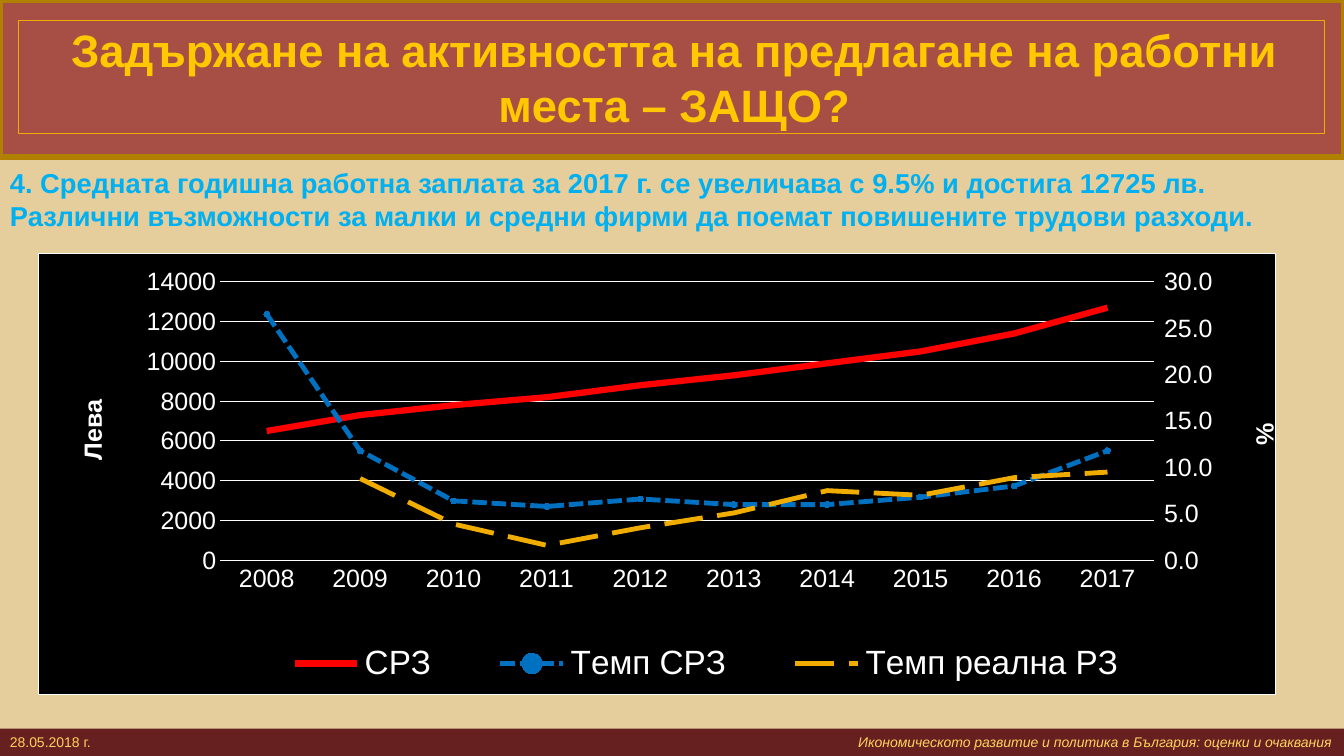
from copy import deepcopy

from pptx import Presentation
from pptx.chart.data import CategoryChartData
from pptx.dml.color import RGBColor
from pptx.enum.chart import XL_CHART_TYPE as Chart, XL_LEGEND_POSITION as Legend
from pptx.enum.chart import XL_MARKER_STYLE as Marker, XL_TICK_MARK as Tick
from pptx.enum.dml import MSO_LINE as Dash
from pptx.enum.shapes import MSO_SHAPE as Shape
from pptx.enum.text import MSO_ANCHOR as Anchor, MSO_AUTO_SIZE as AutoSize, PP_ALIGN as Align
from pptx.oxml import parse_xml
from pptx.oxml.ns import nsdecls, qn
from pptx.oxml.xmlchemy import OxmlElement
from pptx.util import Cm, Pt

SAND = RGBColor(0xE5, 0xCD, 0x9C)
BRICK = RGBColor(0xA8, 0x4F, 0x45)
MAROON = RGBColor(0x67, 0x20, 0x20)
BRONZE = RGBColor(0xB2, 0x80, 0x00)
AMBER = RGBColor(0xF0, 0xAD, 0x00)
YELLOW = RGBColor(0xFF, 0xC8, 0x00)
PALE_GOLD = RGBColor(0xFF, 0xD2, 0x5D)
SKY = RGBColor(0x00, 0xB0, 0xF0)
BLUE = RGBColor(0x00, 0x70, 0xC0)
RED = RGBColor(0xFF, 0x00, 0x00)
WHITE = RGBColor(0xFF, 0xFF, 0xFF)

FONT = "Arial"
TITLE = "Задържане на активността на предлагане на работни места – ЗАЩО?"
STATEMENT = ("4. Средната годишна работна заплата за 2017 г. се увеличава с 9.5% и достига 12725 лв. "
             "Различни възможности за малки и средни фирми да поемат повишените трудови разходи.")
DATE = "28.05.2018 г."
EVENT = "Икономическото развитие и политика в България: оценки и очаквания"

YEARS = [str(year) for year in range(2008, 2018)]
SERIES = [
    # name, values, colour, width, dash, marker
    ("СРЗ", [6500, 7300, 7800, 8200, 8800, 9300, 9900, 10500, 11400, 12700],
     RED, 4.5, Dash.SOLID, Marker.NONE),
    ("Темп СРЗ", [26.5, 11.8, 6.4, 5.8, 6.6, 6, 6, 6.8, 8, 11.8],
     BLUE, 3.5, None, Marker.CIRCLE),
    ("Темп реална РЗ", [None, 8.8, 3.9, 1.6, 3.5, 5.1, 7.5, 7, 8.9, 9.5],
     AMBER, 3.5, Dash.LONG_DASH, Marker.NONE),
]
LEFT_UNIT, RIGHT_UNIT = "Лева", "%"

WIDTH, HEIGHT = Cm(33.87), Cm(19.05)


def set_font(font, **values):
    color = values.pop("color")
    for name, value in values.items():
        setattr(font, name, value)
    font.color.rgb = color


def add_bar(page, top, height, fill):
    bar = page.shapes.add_shape(Shape.RECTANGLE, 0, top, WIDTH, height)
    bar.shadow.inherit = False
    bar.fill.solid()
    bar.fill.fore_color.rgb = fill
    return bar


def set_frame(frame):
    frame.word_wrap = True
    frame.auto_size = AutoSize.NONE
    frame.vertical_anchor = Anchor.MIDDLE
    frame.margin_left = Cm(0.25)
    frame.margin_right = frame.margin_top = frame.margin_bottom = Cm(0.13)


def set_layout(element, index, x, y, w=None, h=None, inner=False):
    """Give a chart part a manual place, in fractions of the chart."""
    for old in element.findall(qn("c:layout")):
        element.remove(old)
    layout, manual = OxmlElement("c:layout"), OxmlElement("c:manualLayout")
    settings = [("layoutTarget", "inner" if inner else None), ("xMode", "edge"),
                ("yMode", "edge"), ("x", x), ("y", y), ("w", w), ("h", h)]
    for name, value in settings:
        if value is not None:
            item = OxmlElement(f"c:{name}")
            item.set("val", str(value))
            manual.append(item)
    layout.append(manual)
    element.insert(index, layout)


def format_axes(chart):
    years, levs = chart.category_axis, chart.value_axis
    for axis in (years, levs):
        set_font(axis.tick_labels.font, name=FONT, size=Pt(18), color=WHITE)
        axis.major_tick_mark = axis.minor_tick_mark = Tick.NONE
    levs.has_major_gridlines = True
    for line in (years.format.line, levs.major_gridlines.format.line):
        line.color.rgb = WHITE
        line.width = Pt(0.75)
    levs.format.line.fill.background()
    levs.minimum_scale, levs.maximum_scale, levs.major_unit = 0, 14000, 2000
    levs.tick_labels.number_format = "0"
    levs.tick_labels.number_format_is_linked = False
    levs.axis_title.text_frame.text = LEFT_UNIT
    span = levs.axis_title.text_frame.paragraphs[0].runs[0]
    set_font(span.font, name=FONT, size=Pt(18), bold=True, color=WHITE)
    title = levs.axis_title._element
    title.xpath(".//a:bodyPr")[0].set("rot", "-5400000")
    set_layout(title, 1, 0.027, 0.32)


def add_right_axis(chart):
    """Move every series but the first to a second pair of axes."""
    area = chart._chartSpace.chart.plotArea
    left = area.find(qn("c:lineChart"))
    right = deepcopy(left)
    for position, (kept, moved) in enumerate(zip(left.findall(qn("c:ser")),
                                                 right.findall(qn("c:ser")))):
        if position == 0:
            right.remove(moved)
        else:
            left.remove(kept)
    left.addnext(right)

    years, levs = area.find(qn("c:catAx")), area.find(qn("c:valAx"))
    hidden_years, percent = deepcopy(years), deepcopy(levs)
    levs.addnext(percent)
    percent.addnext(hidden_years)
    new_ids = {years.find(qn("c:axId")).get("val"): "5001",
               levs.find(qn("c:axId")).get("val"): "5002"}
    for part in (right, percent, hidden_years):
        for link in part.xpath("./c:axId | ./c:crossAx"):
            link.set("val", new_ids[link.get("val")])

    hidden_years.find(qn("c:delete")).set("val", "1")
    percent.remove(percent.find(qn("c:majorGridlines")))
    for name, value in {"axPos": "r", "crosses": "max", "majorTickMark": "out",
                        "majorUnit": "5"}.items():
        percent.find(qn(f"c:{name}")).set("val", value)
    percent.xpath("./c:scaling/c:max")[0].set("val", "30")
    percent.find(qn("c:numFmt")).set("formatCode", "0.0")
    title = percent.find(qn("c:title"))
    title.xpath(".//a:t")[0].text = RIGHT_UNIT
    set_layout(title, 1, 0.974, 0.374)


def add_wage_chart(page):
    data = CategoryChartData()
    data.categories = YEARS
    for name, values, *_ in SERIES:
        data.add_series(name, values)
    chart = page.shapes.add_chart(Chart.LINE_MARKERS, Cm(0.95), Cm(6.38),
                                  Cm(31.47), Cm(11.13), data).chart
    chart.has_title = False
    set_font(chart.font, name=FONT, size=Pt(24), color=WHITE)
    chart._chartSpace.find(qn("c:txPr")).addprevious(parse_xml(
        f'<c:spPr {nsdecls("c", "a")}><a:solidFill><a:srgbClr val="000000"/></a:solidFill>'
        '<a:ln w="9525"><a:solidFill><a:srgbClr val="FFFFFF"/></a:solidFill></a:ln></c:spPr>'))
    for series, (_, _, color, width, dash, marker) in zip(chart.plots[0].series, SERIES):
        line = series.format.line
        line.color.rgb = color
        line.width = Pt(width)
        line.dash_style = dash or Dash.SQUARE_DOT
        if dash is None:
            line._ln.find(qn("a:prstDash")).set("val", "sysDash")
        series.smooth = False
        series.marker.style = marker
        if marker != Marker.NONE:
            series.marker.size = 4
            series.marker.format.fill.solid()
            series.marker.format.fill.fore_color.rgb = color
            series.marker.format.line.color.rgb = color
    chart.plots[0].vary_by_categories = False
    chart.has_legend = True
    chart.legend.position = Legend.BOTTOM
    chart.legend.include_in_layout = False
    set_font(chart.legend.font, name=FONT, size=Pt(24), color=WHITE)
    set_layout(chart.legend._element, 1, 0.16, 0.87, 0.76, 0.12)
    format_axes(chart)
    add_right_axis(chart)
    set_layout(chart._chartSpace.chart.plotArea, 0, 0.147, 0.064, 0.755, 0.632, inner=True)


def add_header(page):
    band = add_bar(page, 0, Cm(3.96), BRICK)
    band.line.color.rgb = BRONZE
    band.line.width = Pt(3.78)
    title = page.shapes.title
    title.element.addprevious(band.element)
    title.left, title.top, title.width, title.height = Cm(0.47), Cm(0.51), Cm(32.92), Cm(2.85)
    title.line.color.rgb = AMBER
    title.line.width = Pt(0.75)
    set_frame(title.text_frame)
    title.text_frame.text = TITLE
    para = title.text_frame.paragraphs[0]
    para.alignment = Align.CENTER
    set_font(para.runs[0].font, name=FONT, size=Pt(32.4), bold=True, color=YELLOW)


def add_footer(page):
    bar = add_bar(page, Cm(18.36), Cm(0.69), MAROON)
    bar.line.fill.background()
    set_frame(bar.text_frame)
    para = bar.text_frame.paragraphs[0]
    para.alignment = Align.LEFT
    tabs, stop = OxmlElement("a:tabLst"), OxmlElement("a:tab")
    stop.set("pos", str(Cm(33.3)))
    stop.set("algn", "r")
    tabs.append(stop)
    para._p.get_or_add_pPr().append(tabs)
    for text, italic in ((DATE + "\t", False), (EVENT, True)):
        span = para.add_run()
        span.text = text
        set_font(span.font, name=FONT, size=Pt(10), italic=italic, color=PALE_GOLD)


def add_statement(page):
    box = page.shapes.add_textbox(0, Cm(4.01), Cm(33.4), Cm(2.03))
    set_frame(box.text_frame)
    box.text_frame.text = STATEMENT
    set_font(box.text_frame.paragraphs[0].runs[0].font,
             name=FONT, size=Pt(19.5), bold=True, color=SKY)


def main():
    deck = Presentation()
    deck.slide_width, deck.slide_height = WIDTH, HEIGHT
    page = deck.slides.add_slide(deck.slide_layouts[5])
    page.background.fill.solid()
    page.background.fill.fore_color.rgb = SAND
    add_header(page)
    add_footer(page)
    add_statement(page)
    add_wage_chart(page)
    deck.save("out.pptx")


if __name__ == "__main__":
    main()
